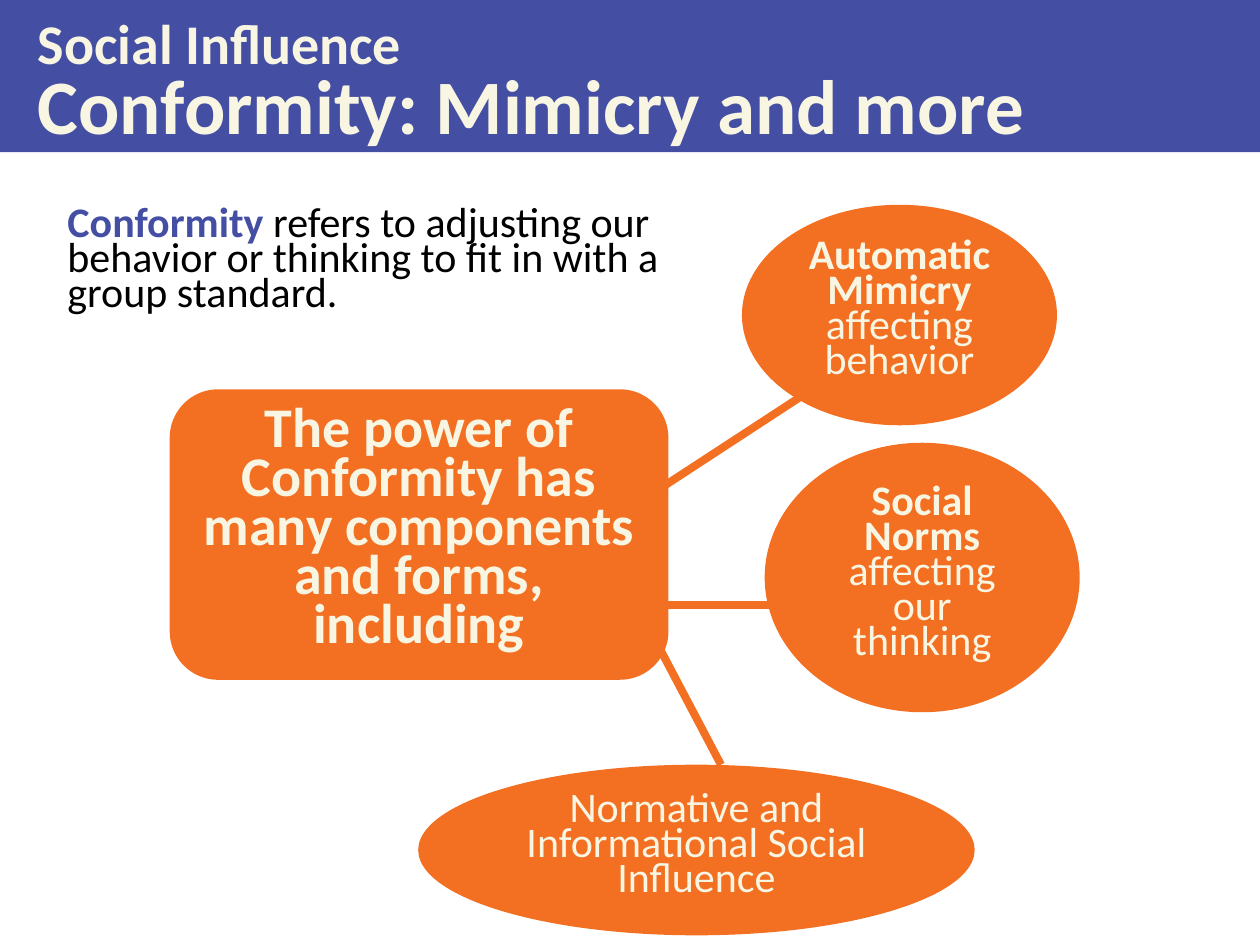
from lxml.etree import SubElement
from pptx import Presentation
from pptx.dml.color import RGBColor
from pptx.enum.shapes import MSO_CONNECTOR as Link, MSO_SHAPE as Kind
from pptx.enum.text import MSO_ANCHOR as Anchor, MSO_AUTO_SIZE as Fit, PP_ALIGN as Align
from pptx.oxml.ns import qn
from pptx.util import Pt

ORANGE = RGBColor(0xF3, 0x6F, 0x21)
BLUE = RGBColor(0x44, 0x4E, 0xA2)
CREAM = RGBColor(0xF8, 0xF6, 0xE3)
BLACK = RGBColor(0, 0, 0)
FONT = "Calibri"


def style(run, size, color, bold):
    font = run.font
    font.name, font.size, font.bold = FONT, Pt(size), bold
    font.color.rgb = color


def write(shape, parts, size, lead, align, before=0):
    frame = shape.text_frame
    frame.word_wrap = True
    frame.auto_size = Fit.NONE
    frame.vertical_anchor = Anchor.TOP
    para = frame.paragraphs[0]
    para.alignment = align
    para.line_spacing = Pt(lead)
    para.space_before = Pt(before)
    for text, color, bold in parts:
        run = para.add_run()
        run.text = text
        style(run, size, color, bold)


def place(shape, box):
    shape.left, shape.top, shape.width, shape.height = map(Pt, box)


def header(slide, box):
    title = slide.shapes.title
    place(title, box)
    title.fill.solid()
    title.fill.fore_color.rgb = BLUE
    frame = title.text_frame
    frame.text = "Social Influence\vConformity: Mimicry and more"
    frame.word_wrap = True
    frame.auto_size = Fit.NONE
    frame.vertical_anchor = Anchor.MIDDLE
    frame.margin_left = Pt(21.6)
    para = frame.paragraphs[0]
    para.alignment = Align.LEFT
    para.line_spacing = Pt(42)
    for run, size in zip(para.runs, (32, 44)):
        style(run, size, CREAM, True)


def intro(slide, box):
    note = slide.shapes.add_textbox(*map(Pt, box))
    parts = [
        ("Conformity", BLUE, True),
        (" refers to adjusting our behavior or thinking to fit in with a group standard.",
         BLACK, False),
    ]
    write(note, parts, 24, 20, Align.LEFT)


def node(slide, kind, box):
    shape = slide.shapes.add_shape(kind, *map(Pt, box))
    shape.shadow.inherit = False
    shape.fill.solid()
    shape.fill.fore_color.rgb = ORANGE
    shape.line.fill.background()
    return shape


def hub(slide, box):
    shape = node(slide, Kind.ROUNDED_RECTANGLE, box)
    text = "The power of Conformity has many components and forms, including"
    write(shape, [(text, CREAM, True)], 32, 28, Align.CENTER)


def branch(slide, box, head, body, start, end):
    left, top = box[:2]
    shape = node(slide, Kind.OVAL, box)
    parts = [(text, CREAM, bold) for text, bold in ((head, True), (body, False)) if text]
    write(shape, parts, 24, 20, Align.CENTER, 4.8)
    ends = [Pt(v) for x, y in (start, end) for v in (left + x, top + y)]
    line = slide.shapes.add_connector(Link.STRAIGHT, *ends)
    line.line.color.rgb = ORANGE
    line.line.width = Pt(4.5)
    SubElement(line._element.spPr, qn("a:effectLst"))


def main():
    deck = Presentation()
    deck.slide_width, deck.slide_height = Pt(720), Pt(540)
    slide = deck.slides.add_slide(deck.slide_layouts[5])
    header(slide, (0, 0, 720, 87))
    hub(slide, (97, 222.5, 285, 166))
    branch(slide, (424, 117, 180, 126), "Automatic Mimicry ", "affecting behavior",
           (-58, 169.5), (40, 105.5))
    branch(slide, (437, 253, 180, 154), "Social Norms ", "affecting our thinking",
           (9, 92.5), (-55, 92.5))
    branch(slide, (239, 437, 318, 97.5), "", "Normative and Informational Social Influence",
           (134, -74), (173, 0))
    intro(slide, (31.5, 117, 360, 69))
    deck.save("out.pptx")


if __name__ == "__main__":
    main()
